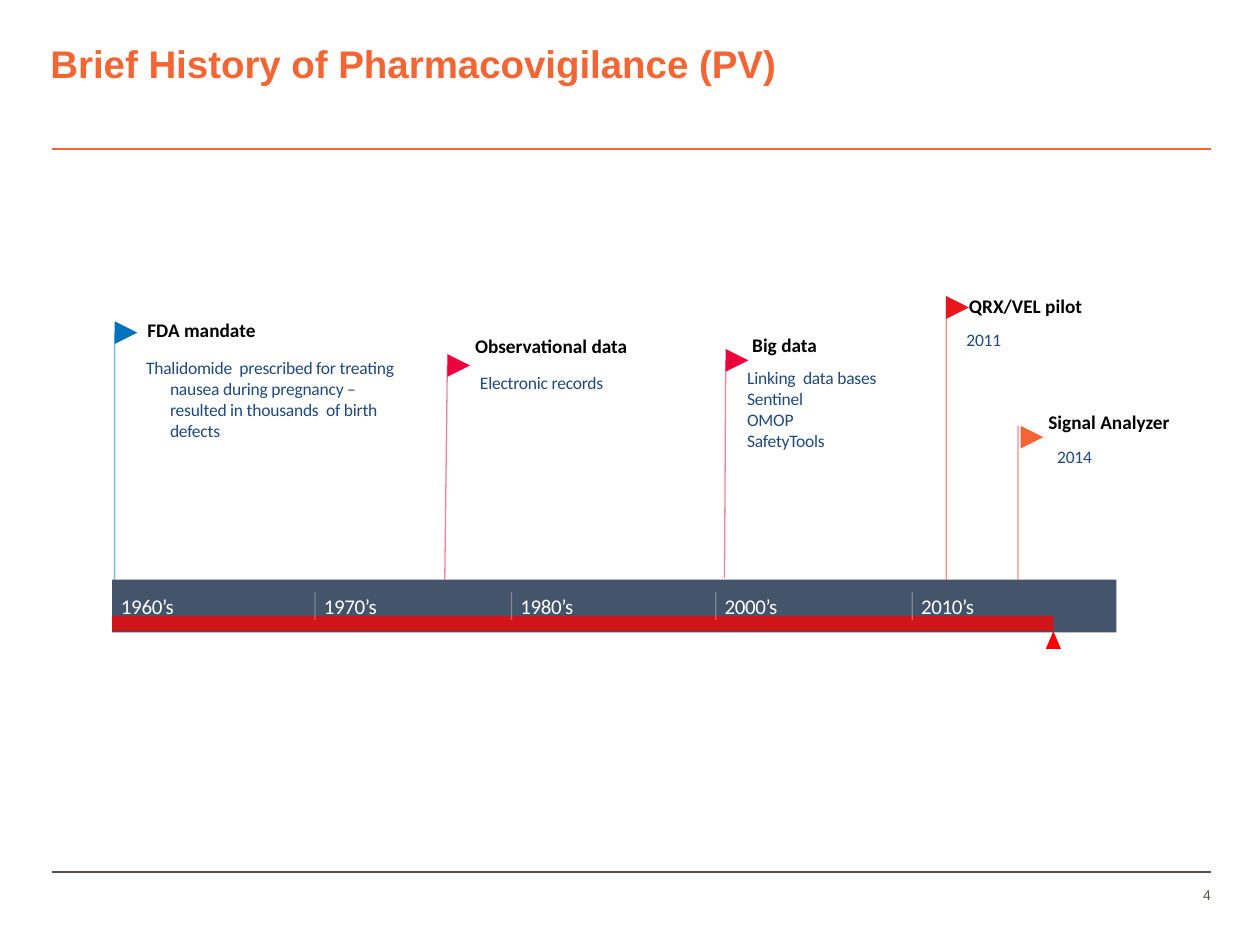
from dataclasses import dataclass

from lxml.etree import SubElement
from pptx import Presentation
from pptx.dml.color import RGBColor
from pptx.enum.shapes import MSO_CONNECTOR, MSO_SHAPE as SHAPE
from pptx.enum.text import MSO_ANCHOR as ANCHOR, MSO_AUTO_SIZE as FIT, PP_ALIGN as ALIGN
from pptx.oxml.ns import qn
from pptx.util import Inches, Pt

ORANGE = RGBColor(0xF3, 0x66, 0x33)
BROWN = RGBColor(0x54, 0x4F, 0x40)
SLATE = RGBColor(0x44, 0x54, 0x6A)
RED = RGBColor(0xFF, 0x00, 0x00)
SCARLET = RGBColor(0xEA, 0x16, 0x1E)
CRIMSON = RGBColor(0xED, 0x00, 0x3C)
BLUE = RGBColor(0x00, 0x72, 0xBC)
NAVY = RGBColor(0x1F, 0x49, 0x7E)
BLACK = RGBColor(0x00, 0x00, 0x00)
WHITE = RGBColor(0xFF, 0xFF, 0xFF)

# The slide is a grid of square cells
COLUMNS, ROWS = 100, 75
WIDTH, HEIGHT = Inches(10), Inches(7.5)
FLAG_SIZE = 1.8
HANGING = 1.9

TITLE = {"name": "Arial", "size": Pt(22), "bold": True}
NUMBER = {"name": "Arial", "size": Pt(8)}
DECADE = {"name": "Calibri", "size": Pt(12)}
HEADING = {"name": "Calibri", "size": Pt(11), "bold": True}
DETAIL = {"name": "Calibri", "size": Pt(10)}


@dataclass
class Milestone:
    heading: str
    details: list
    color: RGBColor
    flag: tuple         # left, top
    pole: tuple         # from x, from y, to x, to y
    heading_at: tuple   # left, top
    detail_box: tuple   # left, top, width, height


MILESTONES = [
    Milestone("FDA mandate",
              ["Thalidomide  prescribed for treating nausea during pregnancy – "
               "resulted in thousands  of birth defects"],
              BLUE, (9.1, 25.5), (9.1, 26.4, 9.1, 46.5), (11.7, 25.2), (11.6, 28.3, 20, 6.7)),
    Milestone("Observational data", ["Electronic records"], CRIMSON,
              (35.5, 28.1), (35.5, 29, 35.3, 46), (37.7, 26.5), (38.1, 29.5, 11.7, 1.7)),
    Milestone("Big data", ["Linking  data bases", "Sentinel", "OMOP", "SafetyTools"], CRIMSON,
              (57.6, 27.7), (57.6, 28.6, 57.5, 45.9), (59.7, 26.4), (59.3, 29.1, 11.8, 6.7)),
    Milestone("QRX/VEL pilot", ["2011"], SCARLET,
              (75.1, 23.5), (75.1, 23.7, 75.1, 46.2), (76.9, 23.3), (76.7, 26.1, 6.1, 1.7)),
    Milestone("Signal Analyzer", ["2014"], ORANGE,
              (81, 33.8), (80.8, 33.8, 80.8, 46.2), (83.2, 32.5), (83.9, 35.4, 6.1, 1.7)),
]
POLE_COLORS = {"Signal Analyzer": SCARLET}


def col(count):
    return round(WIDTH * count / COLUMNS)


def row(count):
    return round(HEIGHT * count / ROWS)


def place(box):
    left, top, width, height = box
    return col(left), row(top), col(width), row(height)


def set_alpha(element, percent):
    color = next(element.iter(qn("a:srgbClr")))
    SubElement(color, qn("a:alpha")).set("val", str(percent * 1000))


def add_line(slide, ends, color, weight=0.75, alpha=None):
    x1, y1, x2, y2 = ends
    line = slide.shapes.add_connector(
        MSO_CONNECTOR.STRAIGHT, col(x1), row(y1), col(x2), row(y2))
    line.line.color.rgb = color
    line.line.width = Pt(weight)
    if alpha:
        set_alpha(line.line.fill._xPr, alpha)
    SubElement(line._element.spPr, qn("a:effectLst"))


def add_block(slide, kind, box, color, alpha=None, rotation=0):
    shape = slide.shapes.add_shape(kind, *place(box))
    shape.shadow.inherit = False
    shape.fill.solid()
    shape.fill.fore_color.rgb = color
    shape.line.fill.background()
    shape.rotation = rotation
    if alpha:
        set_alpha(shape._element.spPr, alpha)


def fill_text(shape, lines, look, color, align=ALIGN.LEFT, anchor=ANCHOR.MIDDLE,
              wrap=True, indent=0, spacing=0):
    frame = shape.text_frame
    settings = {"margin_left": 0, "margin_top": 0, "margin_right": 0, "margin_bottom": 0,
                "word_wrap": wrap, "vertical_anchor": anchor, "auto_size": FIT.NONE}
    for key, value in settings.items():
        setattr(frame, key, value)
    for index, line in enumerate(lines):
        paragraph = frame.add_paragraph() if index else frame.paragraphs[0]
        paragraph.alignment = align
        if indent:
            properties = paragraph._p.get_or_add_pPr()
            properties.set("marL", str(col(indent)))
            properties.set("indent", str(-col(indent)))
        run = paragraph.add_run()
        run.text = line
        for key, value in look.items():
            setattr(run.font, key, value)
        run.font.color.rgb = color
        if spacing:
            run._r.get_or_add_rPr().set("spc", str(spacing))


def add_text(slide, box, lines, look, color, **options):
    fill_text(slide.shapes.add_textbox(*place(box)), lines, look, color, **options)


def add_frame(slide, box):
    """Title, the rules above and below the content, and the page number."""
    left, top, width, height = box
    right, bottom = left + width, top + height
    title = slide.shapes.title
    title.left, title.top, title.width, title.height = place((4, 3.2, 82.9, 3.7))
    fill_text(title, ["Brief History of Pharmacovigilance (PV)"], TITLE, ORANGE,
              anchor=ANCHOR.TOP)
    add_line(slide, (left, top, right, top), ORANGE, 1)
    add_line(slide, (left, bottom, right, bottom), BROWN, 1)
    add_text(slide, (right - 9.1, bottom + 1.2, 9.1, 4), ["4"], NUMBER, BROWN,
             align=ALIGN.RIGHT, anchor=ANCHOR.TOP)


def add_band(slide, box):
    """Timeline band with decades, elapsed time and the marker for today."""
    left, top, width, height = box
    bottom, elapsed = top + height, 74.7
    add_block(slide, SHAPE.RECTANGLE, box, SLATE)
    add_block(slide, SHAPE.RECTANGLE, (left, bottom - 1.3, elapsed, 1.2), RED, alpha=75)
    add_block(slide, SHAPE.ISOSCELES_TRIANGLE,
              (left + elapsed - 0.6, bottom - 0.1, 1.2, 1.4), RED)
    decades = {"1960’s": left, "1970’s": 25, "1980’s": 40.6, "2000’s": 56.8, "2010’s": 72.4}
    for decade, start in decades.items():
        if start > left:
            add_line(slide, (start, top + 1, start, top + 3.2), WHITE, alpha=30)
        add_text(slide, (start + 0.7, top + 1.1, 2.5, 2), [decade], DECADE, WHITE,
                 wrap=False, indent=HANGING, spacing=-20)


def add_milestone(slide, milestone):
    """Flag with its heading and details."""
    add_block(slide, SHAPE.FLOWCHART_MERGE, (*milestone.flag, FLAG_SIZE, FLAG_SIZE),
              milestone.color, rotation=270)
    left, top = milestone.heading_at
    add_text(slide, (left, top, min(27.8, COLUMNS - left), 1.9), [milestone.heading],
             HEADING, BLACK, indent=HANGING)
    add_text(slide, milestone.detail_box, milestone.details, DETAIL, NAVY,
             indent=HANGING, spacing=-10)


def main():
    presentation = Presentation()
    presentation.slide_width, presentation.slide_height = WIDTH, HEIGHT
    slide = presentation.slides.add_slide(presentation.slide_layouts[5])
    add_frame(slide, (4.1, 11.8, 92, 57.4))
    # Poles stand behind the band
    for milestone in MILESTONES:
        color = POLE_COLORS.get(milestone.heading, milestone.color)
        add_line(slide, milestone.pole, color, alpha=50)
    add_band(slide, (8.9, 46, 79.7, 4.2))
    for milestone in MILESTONES:
        add_milestone(slide, milestone)
    presentation.save("out.pptx")


if __name__ == "__main__":
    main()
